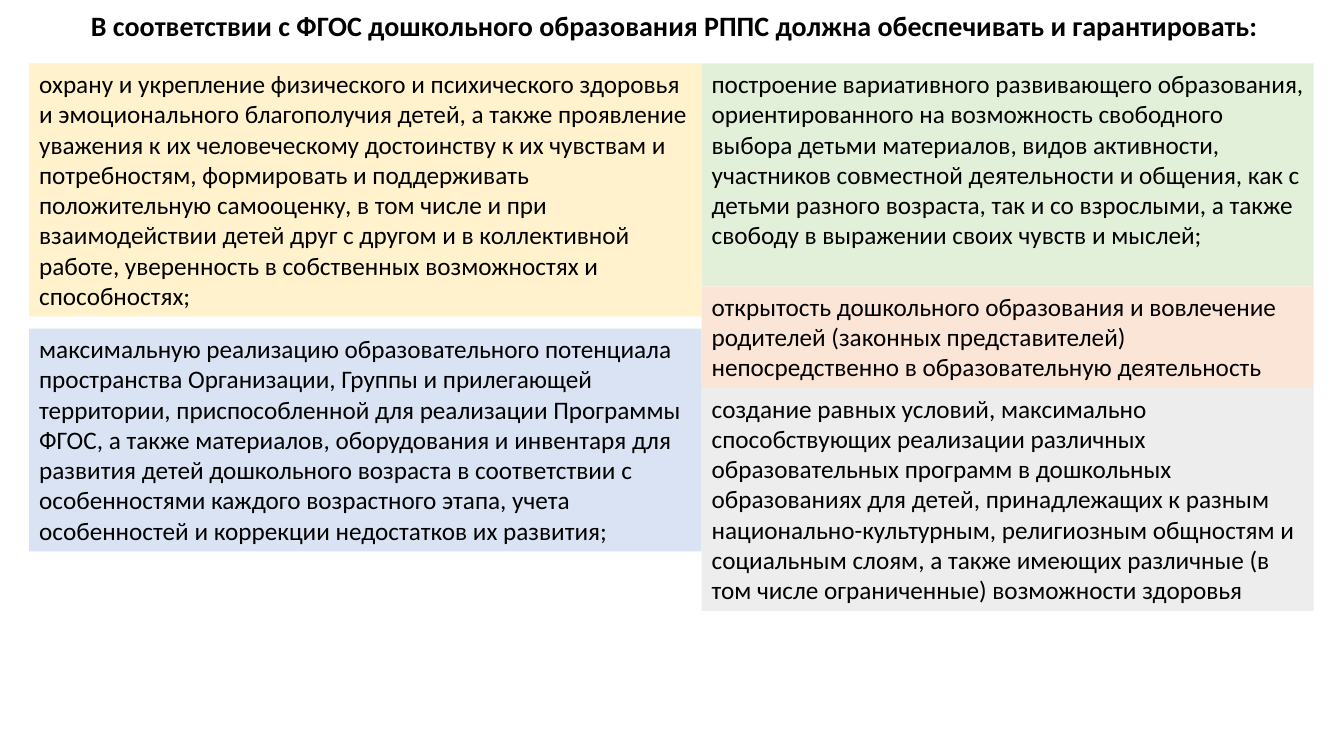
"""Build a slide listing what the preschool learning environment must ensure."""
from dataclasses import dataclass

from pptx import Presentation
from pptx.dml.color import RGBColor
from pptx.enum.text import MSO_ANCHOR, MSO_AUTO_SIZE, PP_ALIGN
from pptx.slide import Slide
from pptx.text.text import TextFrame
from pptx.util import Inches, Pt


@dataclass(frozen=True)
class Theme:
    font: str = "Calibri"
    title_size: int = 20
    body_size: int = 18
    text: str = "000000"
    yellow: str = "FFF2CC"
    blue: str = "DAE3F3"
    green: str = "E2F0D9"
    orange: str = "FBE5D6"
    gray: str = "EDEDED"


@dataclass(frozen=True)
class Requirement:
    lines: int
    fill: str
    text: str


@dataclass(frozen=True)
class Column:
    left: float
    right: float
    gap: float
    requirements: tuple[Requirement, ...]


THEME = Theme()
SLIDE_WIDTH, SLIDE_HEIGHT = 13.33, 7.5
COLUMN_EDGES = (0.29, 6.96, 13.03)
FIRST_ROW_TOP = 0.63
LINE_HEIGHT = 0.3
VERTICAL_PADDING = 0.11

TITLE = "В соответствии с ФГОС дошкольного образования РППС должна обеспечивать и гарантировать:"

COLUMNS = (
    Column(COLUMN_EDGES[0], COLUMN_EDGES[1], 0.12, (
        Requirement(8, THEME.yellow, (
            "охрану и укрепление физического и психического здоровья и эмоционального "
            "благополучия детей, а также проявление уважения к их человеческому достоинству "
            "к их чувствам и потребностям, формировать и поддерживать положительную "
            "самооценку, в том числе и при взаимодействии детей друг с другом и в "
            "коллективной работе, уверенность в собственных возможностях и способностях;")),
        Requirement(7, THEME.blue, (
            "максимальную реализацию образовательного потенциала пространства Организации, "
            "Группы и прилегающей территории, приспособленной для реализации Программы ФГОС, "
            "а также материалов, оборудования и инвентаря для развития детей дошкольного "
            "возраста в соответствии с особенностями каждого возрастного этапа, учета "
            "особенностей и коррекции недостатков их развития;")),
    )),
    Column(COLUMN_EDGES[1], COLUMN_EDGES[2], 0, (
        Requirement(7, THEME.green, (
            "построение вариативного развивающего образования, ориентированного на "
            "возможность свободного выбора детьми материалов, видов активности, участников "
            "совместной деятельности и общения, как с детьми разного возраста, так и со "
            "взрослыми, а также свободу в выражении своих чувств и мыслей;")),
        Requirement(3, THEME.orange, (
            "открытость дошкольного образования и вовлечение родителей (законных "
            "представителей) непосредственно в образовательную деятельность")),
        Requirement(7, THEME.gray, (
            "создание равных условий, максимально способствующих реализации различных "
            "образовательных программ в дошкольных образованиях для детей, принадлежащих к "
            "разным национально-культурным, религиозным общностям и социальным слоям, а "
            "также имеющих различные (в том числе ограниченные) возможности здоровья")),
    )),
)


def write_text(frame: TextFrame, text: str, size: int, align: PP_ALIGN, bold: bool = False) -> None:
    """Fill a text frame with one styled paragraph."""
    frame.word_wrap = True
    frame.auto_size = MSO_AUTO_SIZE.SHAPE_TO_FIT_TEXT
    frame.vertical_anchor = MSO_ANCHOR.TOP
    para = frame.paragraphs[0]
    para.text = text
    para.alignment = align
    para.font.name = THEME.font
    para.font.size = Pt(size)
    para.font.bold = bold
    para.font.color.rgb = RGBColor.from_string(THEME.text)


def draw_title(page: Slide) -> None:
    """Draw the centred heading."""
    box = page.shapes.add_textbox(Inches(0.47), Inches(0.04), Inches(12.44), Inches(0.44))
    write_text(box.text_frame, TITLE, THEME.title_size, PP_ALIGN.CENTER, bold=True)


def draw_column(page: Slide, column: Column) -> None:
    """Stack the filled text boxes of one column from the top down."""
    top = FIRST_ROW_TOP
    for requirement in column.requirements:
        height = requirement.lines * LINE_HEIGHT + VERTICAL_PADDING
        box = page.shapes.add_textbox(
            Inches(column.left), Inches(top), Inches(column.right - column.left), Inches(height))
        box.fill.solid()
        box.fill.fore_color.rgb = RGBColor.from_string(requirement.fill)
        write_text(box.text_frame, requirement.text, THEME.body_size, PP_ALIGN.LEFT)
        top += height + column.gap


def main() -> None:
    """Create and save the deck."""
    deck = Presentation()
    deck.slide_width, deck.slide_height = Inches(SLIDE_WIDTH), Inches(SLIDE_HEIGHT)
    page = deck.slides.add_slide(deck.slide_layouts[6])
    draw_title(page)
    for column in COLUMNS:
        draw_column(page, column)
    deck.save("out.pptx")


if __name__ == "__main__":
    main()
